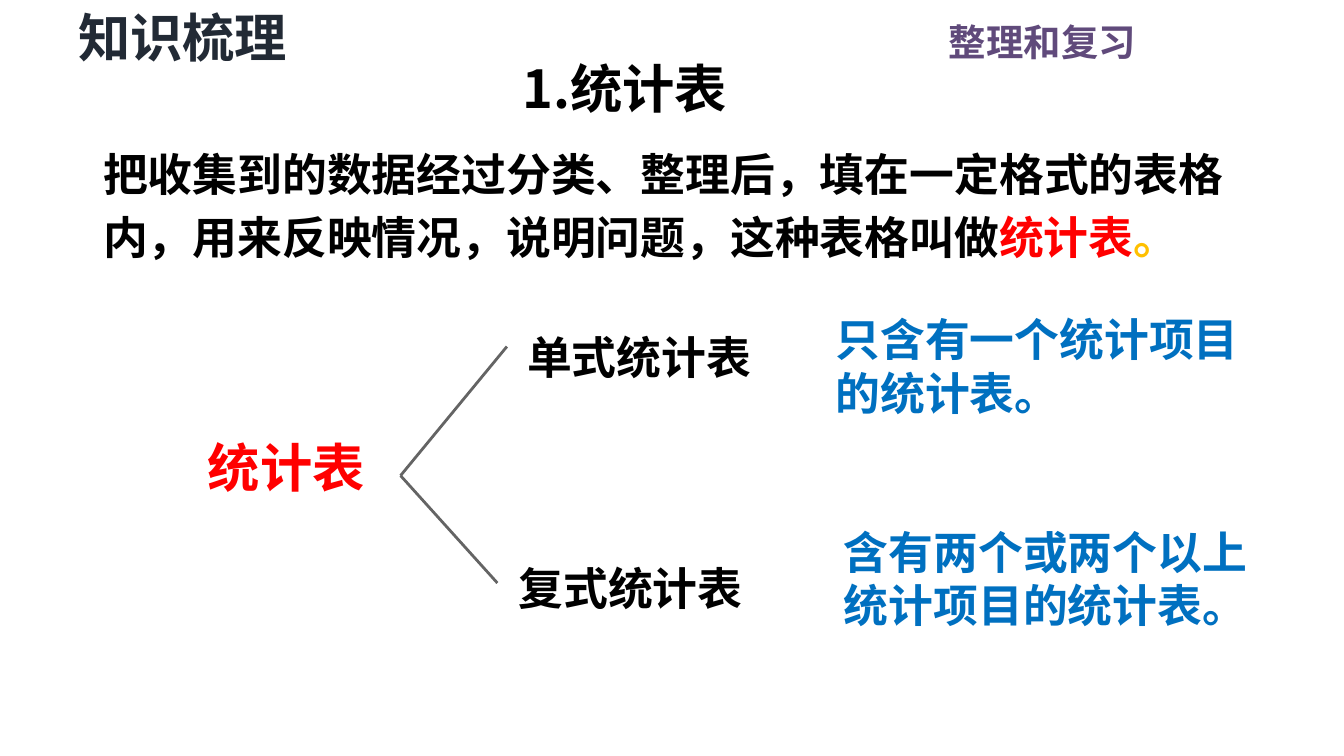
from pptx import Presentation
from pptx.dml.color import RGBColor
from pptx.enum import shapes, text
from pptx.oxml import ns
from pptx.util import Cm, Pt
from lxml import etree

FONT = "Noto Sans CJK SC"
COLORS = {
    "black": "000000",
    "red": "FF0000",
    "gold": "FFC000",
    "blue": "0070C0",
    "plum": "604A7B",
    "navy": "222A35",
    "gray": "646464",
}
ALIGN = text.PP_ALIGN


def style(run, size, color):
    font = run.font
    font.name, font.size, font.bold = FONT, Pt(size), True
    font.color.rgb = RGBColor.from_string(COLORS[color])
    east = etree.SubElement(run._r.get_or_add_rPr(), ns.qn("a:ea"))
    east.set("typeface", FONT)


def fill(shape, box, parts, size=24, align=ALIGN.LEFT, pad=(0.25, 0.13)):
    shape.left, shape.top, shape.width, shape.height = map(Cm, box)
    frame = shape.text_frame
    frame.word_wrap = True
    frame.auto_size = text.MSO_AUTO_SIZE.NONE
    frame.vertical_anchor = text.MSO_ANCHOR.TOP
    frame.margin_left = frame.margin_right = Cm(pad[0])
    frame.margin_top = frame.margin_bottom = Cm(pad[1])
    para = frame.paragraphs[0]
    para.alignment = align
    for words, color in parts:
        run = para.add_run()
        run.text = words
        style(run, size, color)
    return para


def label(slide, box, words, color, **look):
    shape = slide.shapes.add_textbox(*map(Cm, box))
    fill(shape, box, [(words, color)], **look)


def plain(para):
    para.space_before = Pt(0)
    props = para._p.get_or_add_pPr()
    props.set("marL", "0")
    props.set("indent", "0")
    etree.SubElement(props, ns.qn("a:buNone"))


def branch(slide, start, end):
    line = slide.shapes.add_connector(
        shapes.MSO_CONNECTOR.STRAIGHT, *map(Cm, start + end))
    line.line.color.rgb = RGBColor.from_string(COLORS["gray"])
    line.line.width = Pt(1.5)
    etree.SubElement(line._element.spPr, ns.qn("a:effectLst"))


def main():
    deck = Presentation()
    deck.slide_width, deck.slide_height = Cm(25.4), Cm(14.29)
    slide = deck.slides.add_slide(deck.slide_layouts[1])
    tight = (0.18, 0.1)

    fill(slide.shapes.title, (9.7, 0.97, 7.26, 1.4),
         [("1.统计表", "black")], size=28, pad=tight)
    para = fill(slide.placeholders[1], (1.7, 2.46, 22.2, 2.51), [
        ("把收集到的数据经过分类、整理后，填在一定格式的表格内，"
         "用来反映情况，说明问题，这种表格叫做", "black"),
        ("统计表", "red"),
        ("。", "gold"),
    ])
    plain(para)
    para.line_spacing = Pt(34)

    label(slide, (14.71, 0.23, 7.01, 1.12), "整理和复习", "plum",
          size=20, align=ALIGN.RIGHT)
    label(slide, (1.3, 0, 5.13, 1.4), "知识梳理", "navy",
          size=28, pad=tight)

    label(slide, (3.68, 8.1, 3.61, 1.45), "统计表", "red", size=28)
    root = (7.57, 8.99)
    kinds = [
        ((9.58, 6.55), (9.58, 6.1, 5, 1.27), "单式统计表",
         (15.54, 5.77, 8.56, 2.31), "只含有一个统计项目的统计表。"),
        ((9.4, 11.02), (9.3, 10.46, 5.23, 1.27), "复式统计表",
         (15.7, 9.78, 8.64, 2.31), "含有两个或两个以上统计项目的统计表。"),
    ]
    for tip, spot, name, area, note in kinds:
        branch(slide, root, tip)
        label(slide, spot, name, "black", align=ALIGN.CENTER)
        label(slide, area, note, "blue")

    deck.save("out.pptx")


if __name__ == "__main__":
    main()
